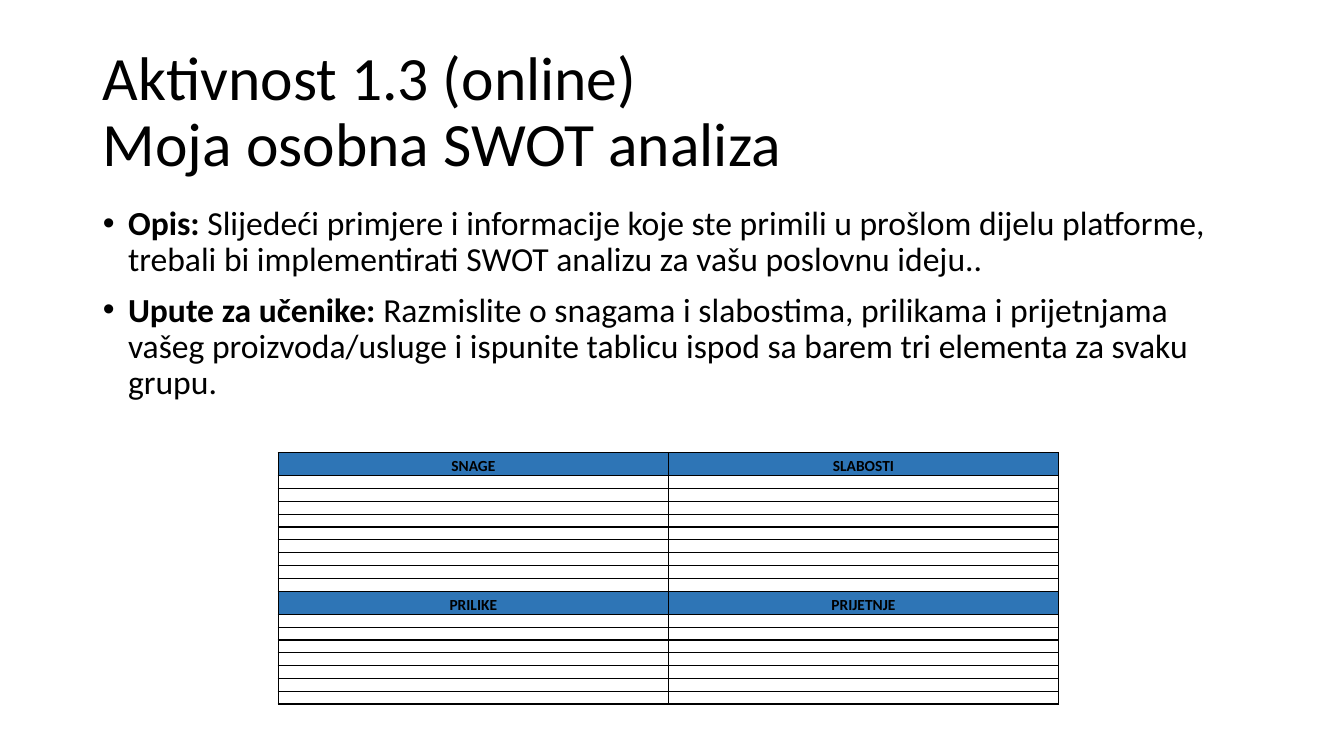
from lxml import etree
from pptx import Presentation
from pptx.dml.color import RGBColor
from pptx.enum import text
from pptx.oxml import ns
from pptx.util import Inches, Pt

BLACK, BLUE = "000000", "2E75B6"
TITLE_LINES = ["Aktivnost 1.3 (online)", "Moja osobna SWOT analiza"]
TASKS = [
    ("Opis: ", "Slijedeći primjere i informacije koje ste primili u prošlom dijelu platforme, "
               "trebali bi implementirati SWOT analizu za vašu poslovnu ideju.."),
    ("Upute za učenike: ", "Razmislite o snagama i slabostima, prilikama i prijetnjama vašeg "
                           "proizvoda/usluge i ispunite tablicu ispod sa barem tri elementa "
                           "za svaku grupu."),
]
# Each group: its two headings and the number of blank rows under them
SWOT_GROUPS = [(("SNAGE", "SLABOSTI"), 9), (("PRILIKE", "PRIJETNJE"), 7)]
TABLE_HEIGHT, HEADING_HEIGHT = 2.5, 0.23


def color(value):
    return RGBColor.from_string(value)


def set_attributes(target, values):
    for name, value in values.items():
        setattr(target, name, value)


def add_run(paragraph, content, size, bold=False):
    run = paragraph.add_run()
    run.text = content
    set_attributes(run.font, {"name": "Calibri", "size": Pt(size), "bold": bold})
    run.font.color.rgb = color(BLACK)


def place(shape, left, top, width, height, anchor):
    set_attributes(shape, {"left": Inches(left), "top": Inches(top),
                           "width": Inches(width), "height": Inches(height)})
    set_attributes(shape.text_frame, {"word_wrap": True, "vertical_anchor": anchor,
                                      "auto_size": text.MSO_AUTO_SIZE.NONE})


def fill_title(shape):
    place(shape, 0.92, 0.4, 11.5, 1.45, text.MSO_ANCHOR.MIDDLE)
    paragraph = shape.text_frame.paragraphs[0]
    set_attributes(paragraph, {"alignment": text.PP_ALIGN.LEFT, "line_spacing": 0.9})
    for index, line in enumerate(TITLE_LINES):
        if index:
            paragraph.add_line_break()
        add_run(paragraph, line, 44)


def add_bullet(paragraph):
    properties = paragraph._p.get_or_add_pPr()
    properties.set("marL", str(Inches(0.25)))
    properties.set("indent", str(-Inches(0.25)))
    etree.SubElement(properties, ns.qn("a:buFont"), typeface="Arial")
    etree.SubElement(properties, ns.qn("a:buChar"), char="•")


def fill_body(shape):
    place(shape, 0.92, 2, 11.5, 4.76, text.MSO_ANCHOR.TOP)
    frame = shape.text_frame
    for index, (label, description) in enumerate(TASKS):
        paragraph = frame.add_paragraph() if index else frame.paragraphs[0]
        set_attributes(paragraph, {"line_spacing": 0.9, "space_before": Pt(10)})
        add_bullet(paragraph)
        add_run(paragraph, label, 24, bold=True)
        add_run(paragraph, description, 24)


def add_borders(cell):
    properties = cell._tc.get_or_add_tcPr()
    for side in ("lnL", "lnR", "lnT", "lnB"):
        line = etree.SubElement(properties, ns.qn(f"a:{side}"), w=str(Pt(1)))
        fill = etree.SubElement(line, ns.qn("a:solidFill"))
        etree.SubElement(fill, ns.qn("a:srgbClr"), val=BLACK)


def format_cell(cell, heading):
    """Style a cell; without a heading it stays blank and low."""
    set_attributes(cell, {"margin_left": Inches(0.03), "margin_right": Inches(0.03),
                          "margin_top": 0, "margin_bottom": 0,
                          "vertical_anchor": text.MSO_ANCHOR.BOTTOM})
    add_borders(cell)
    paragraph = cell.text_frame.paragraphs[0]
    if heading:
        cell.fill.solid()
        cell.fill.fore_color.rgb = color(BLUE)
        set_attributes(paragraph, {"alignment": text.PP_ALIGN.CENTER, "line_spacing": 1.15})
        add_run(paragraph, heading, 11, bold=True)
    else:
        cell.fill.background()
        etree.SubElement(paragraph._p, ns.qn("a:endParaRPr"), sz="500")


def add_swot_table(slide):
    rows = []
    for headings, blank_count in SWOT_GROUPS:
        rows += [headings] + [("", "")] * blank_count
    blank_total = sum(count for _, count in SWOT_GROUPS)
    blank_height = (TABLE_HEIGHT - len(SWOT_GROUPS) * HEADING_HEIGHT) / blank_total
    table = slide.shapes.add_table(len(rows), 2, Inches(2.76), Inches(4.49),
                                   Inches(7.74), Inches(TABLE_HEIGHT)).table
    set_attributes(table, {"first_row": False, "horz_banding": False})
    for row, headings in zip(table.rows, rows):
        row.height = Inches(HEADING_HEIGHT if headings[0] else blank_height)
        for cell, heading in zip(row.cells, headings):
            format_cell(cell, heading)


def main():
    presentation = Presentation()
    set_attributes(presentation, {"slide_width": Inches(13.33), "slide_height": Inches(7.5)})
    slide = presentation.slides.add_slide(presentation.slide_layouts[1])
    fill_title(slide.shapes.title)
    fill_body(slide.placeholders[1])
    add_swot_table(slide)
    presentation.save("out.pptx")


if __name__ == "__main__":
    main()
